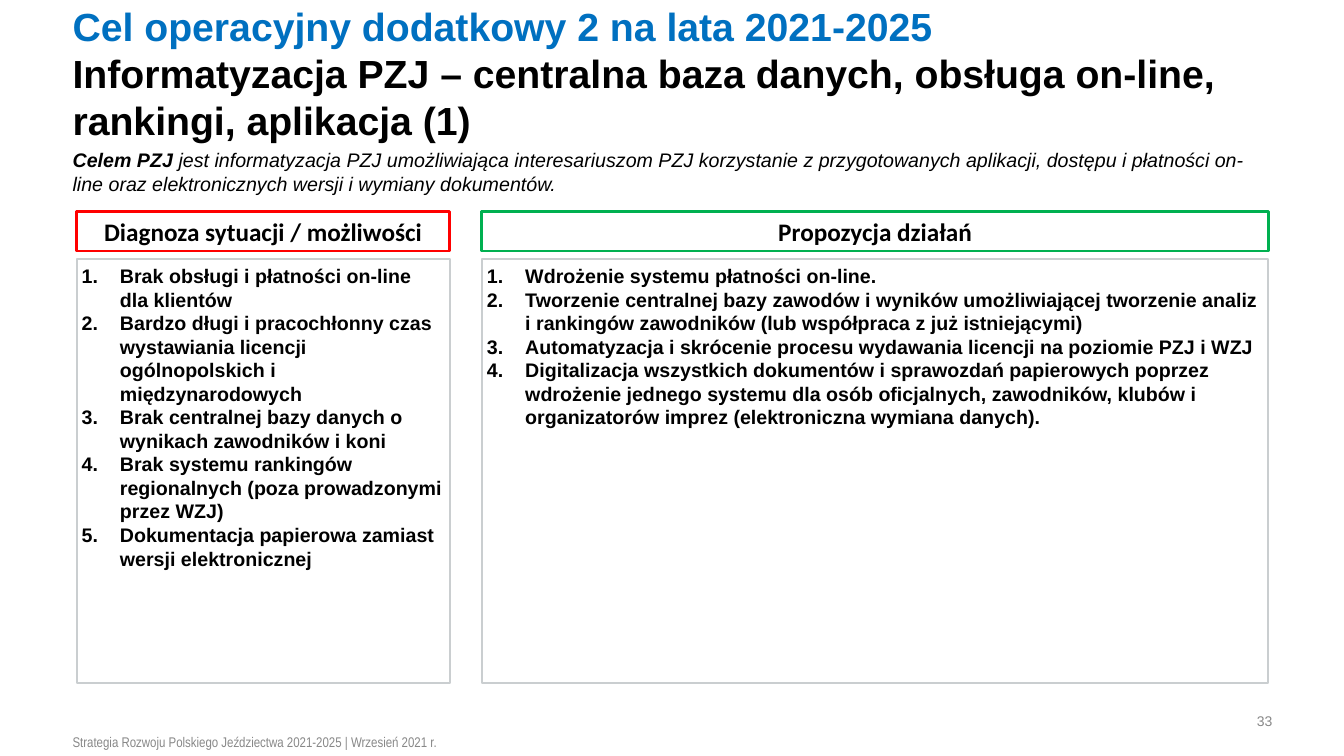
import pptx
import pptx.dml.color
import pptx.enum.shapes
import pptx.enum.text
import pptx.oxml
import pptx.util
from pptx.util import Inches

ALIGN = pptx.enum.text.PP_ALIGN
ANCHOR = pptx.enum.text.MSO_ANCHOR
BLACK, BLUE, GRAY, BORDER = "000000", "0070C0", "888888", "CACED0"


def color(value):
    return pptx.dml.color.RGBColor.from_string(value)


def add_text(p, text, size=14, font="Arial", fill=BLACK, bold=False, italic=False):
    r = p.add_run()
    r.text = text
    r.font.size = pptx.util.Pt(size)
    r.font.name = font
    r.font.color.rgb = color(fill)
    r.font.bold = bold
    r.font.italic = italic


class SlideBuilder:
    inset = Inches(0.05)
    indent = Inches(0.38)

    def __init__(self, prs):
        self.s = prs.slides.add_slide(prs.slide_layouts[6])

    def frame(self, sp, anchor, wrap=True):
        tf = sp.text_frame
        tf.word_wrap = wrap
        tf.vertical_anchor = anchor
        tf.margin_left = tf.margin_right = self.inset
        tf.margin_top = tf.margin_bottom = self.inset
        return tf

    def text_box(self, x, y, w, h, anchor=ANCHOR.MIDDLE, wrap=True):
        sp = self.s.shapes.add_textbox(Inches(x), Inches(y), Inches(w), Inches(h))
        return self.frame(sp, anchor, wrap).paragraphs[0]

    def outline_box(self, x, y, w, h, line, width, anchor):
        sp = self.s.shapes.add_shape(pptx.enum.shapes.MSO_SHAPE.RECTANGLE,
                                     Inches(x), Inches(y), Inches(w), Inches(h))
        sp.shadow.inherit = False
        sp.fill.background()
        sp.line.color.rgb = color(line)
        sp.line.width = pptx.util.Pt(width)
        return self.frame(sp, anchor)

    def numbered(self, tf, items):
        for i, item in enumerate(items):
            p = tf.add_paragraph() if i else tf.paragraphs[0]
            p.alignment = ALIGN.LEFT
            pPr = p._p.get_or_add_pPr()
            pPr.set("marL", str(self.indent))
            pPr.set("indent", str(-self.indent))
            num = pptx.oxml.parse_xml(
                '<a:buAutoNum xmlns:a="http://schemas.openxmlformats.org/'
                'drawingml/2006/main" type="arabicPeriod"/>')
            pPr.append(num)
            add_text(p, item, bold=True)

    def column(self, x, w, heading, accent, items):
        tf = self.outline_box(x, 2.1, w, 0.39, accent, 2, ANCHOR.MIDDLE)
        p = tf.paragraphs[0]
        p.alignment = ALIGN.CENTER
        add_text(p, heading, size=18, font="Calibri", bold=True)
        tf = self.outline_box(x, 2.57, w, 4.21, BORDER, 1.5, ANCHOR.TOP)
        self.numbered(tf, items)


def main():
    prs = pptx.Presentation()
    prs.slide_width, prs.slide_height = Inches(13.33), Inches(7.5)
    slide = SlideBuilder(prs)

    # Title
    p = slide.text_box(0.67, 0.3, 12.54, 0.85)
    add_text(p, "Cel operacyjny dodatkowy 2 na lata 2021-2025", size=28, fill=BLUE, bold=True)
    p.add_line_break()
    add_text(p, "Informatyzacja PZJ – centralna baza danych, obsługa on-line, "
                "rankingi, aplikacja (1)", size=28, bold=True)

    # Goal statement
    p = slide.text_box(0.67, 1.42, 11.91, 0.57, anchor=ANCHOR.TOP)
    p.space_before = pptx.util.Pt(3)
    add_text(p, "Celem PZJ ", bold=True, italic=True)
    add_text(p, "jest informatyzacja PZJ umożliwiająca interesariuszom PZJ korzystanie "
                "z przygotowanych aplikacji, dostępu i płatności on-line oraz "
                "elektronicznych wersji i wymiany dokumentów.", italic=True)

    # Diagnosis and proposed actions
    slide.column(0.76, 3.7, "Diagnoza sytuacji / możliwości", "FF0000", [
        "Brak obsługi i płatności on-line dla klientów",
        "Bardzo długi i pracochłonny czas wystawiania licencji ogólnopolskich "
        "i międzynarodowych",
        "Brak centralnej bazy danych o wynikach zawodników i koni",
        "Brak systemu rankingów regionalnych (poza prowadzonymi przez WZJ)",
        "Dokumentacja papierowa zamiast wersji elektronicznej",
    ])
    slide.column(4.78, 7.8, "Propozycja działań", "00B050", [
        "Wdrożenie systemu płatności on-line.",
        "Tworzenie centralnej bazy zawodów i wyników umożliwiającej tworzenie analiz "
        "i rankingów zawodników (lub współpraca z już istniejącymi)",
        "Automatyzacja i skrócenie procesu wydawania licencji na poziomie PZJ i WZJ",
        "Digitalizacja wszystkich dokumentów i sprawozdań papierowych poprzez wdrożenie "
        "jednego systemu dla osób oficjalnych, zawodników, klubów i organizatorów imprez "
        "(elektroniczna wymiana danych).",
    ])

    # Page number and footer
    p = slide.text_box(12.41, 7.02, 0.26, 0.27, wrap=False)
    p.alignment = ALIGN.RIGHT
    add_text(p, "33", size=10, fill=GRAY)
    p = slide.text_box(0.67, 7.23, 8.66, 0.27)
    add_text(p, "Strategia Rozwoju Polskiego Jeździectwa 2021-2025 | Wrzesień 2021 r.",
             size=10, font="Arial Narrow", fill=GRAY)

    prs.save("out.pptx")


if __name__ == "__main__":
    main()
